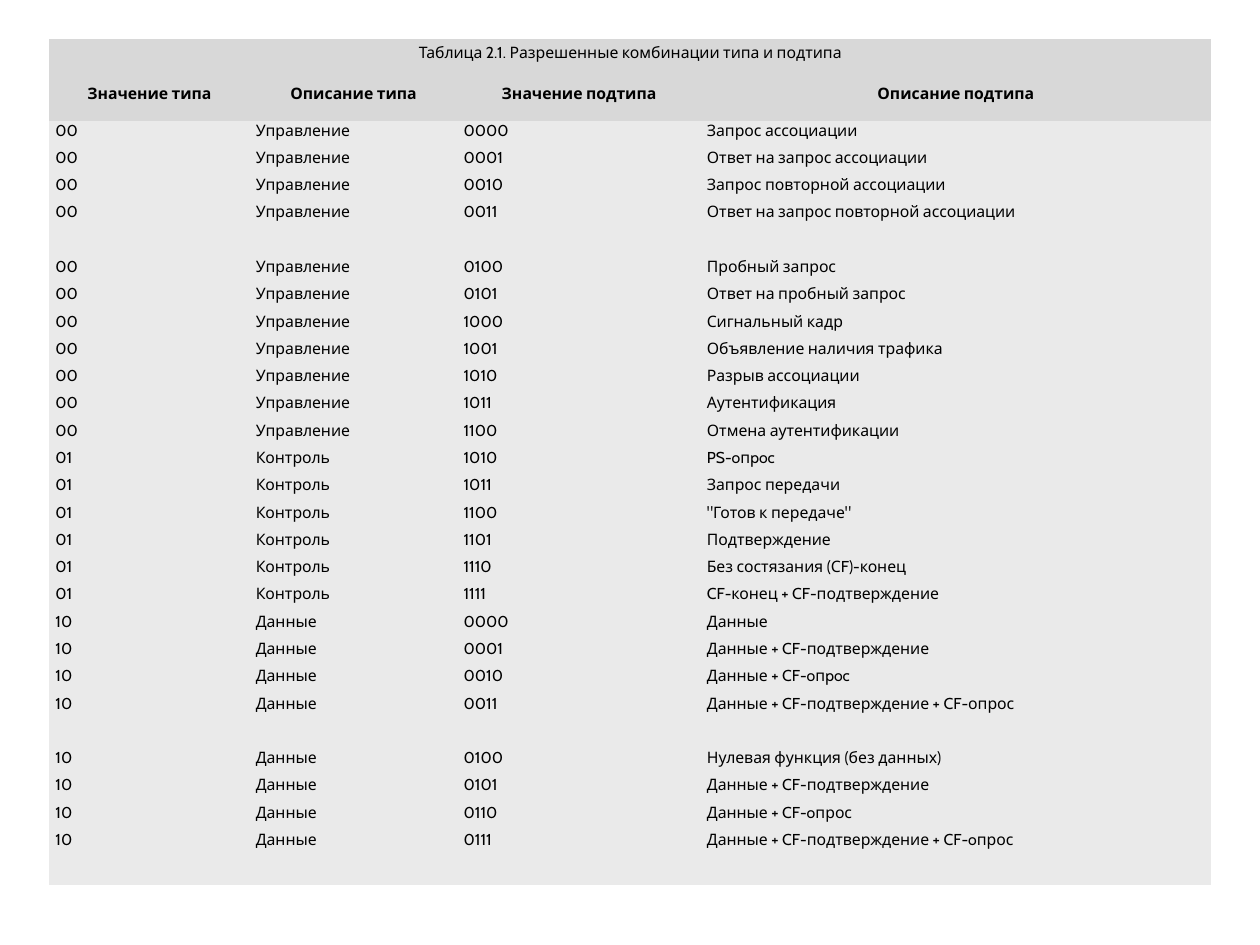
from pptx import Presentation
from pptx.dml.color import RGBColor
from pptx.enum.text import MSO_ANCHOR, PP_ALIGN
from pptx.util import Inches, Pt

LEFT, CENTER = PP_ALIGN.LEFT, PP_ALIGN.CENTER
TOP, MIDDLE = MSO_ANCHOR.TOP, MSO_ANCHOR.MIDDLE
COLORS = {"head": "D8D8D8", "body": "EAEAEA", "text": "000000"}
NO_GRID = "{2D5ABB26-0587-4C30-8999-92F81FD0307C}"

TITLE = "Таблица 2.1. Разрешенные комбинации типа и подтипа"
HEADS = ["Значение типа", "Описание типа", "Значение подтипа", "Описание подтипа"]
GROUPS = [
    ("00", "Управление", [
        ("0000", "Запрос ассоциации"),
        ("0001", "Ответ на запрос ассоциации"),
        ("0010", "Запрос повторной ассоциации"),
        ("0011", "Ответ на запрос повторной ассоциации"),
        ("0100", "Пробный запрос"),
        ("0101", "Ответ на пробный запрос"),
        ("1000", "Сигнальный кадр"),
        ("1001", "Объявление наличия трафика"),
        ("1010", "Разрыв ассоциации"),
        ("1011", "Аутентификация"),
        ("1100", "Отмена аутентификации"),
    ]),
    ("01", "Контроль", [
        ("1010", "PS-oпpoc"),
        ("1011", "Запрос передачи"),
        ("1100", '"Готов к передаче"'),
        ("1101", "Подтверждение"),
        ("1110", "Без состязания (СF)-конец"),
        ("1111", "CF-конец + CF-подтверждение"),
    ]),
    ("10", "Данные", [
        ("0000", "Данные"),
        ("0001", "Данные + CF-подтверждение"),
        ("0010", "Данные + CF-oпpoc"),
        ("0011", "Данные + CF-подтверждение + CF-опрос"),
        ("0100", "Нулевая функция (без данных)"),
        ("0101", "Данные + CF-подтверждение"),
        ("0110", "Данные + CF-oпрос"),
        ("0111", "Данные + CF-подтверждение + CF-oпрос"),
    ]),
]
WIDTHS = [1.59, 1.65, 1.93, 4.05]
TALL = {1, 5, 22, 26}  # rows of double height


def write(cell, text, fill="body", bold=False, align=LEFT, anchor=TOP):
    cell.fill.solid()
    cell.fill.fore_color.rgb = RGBColor.from_string(COLORS[fill])
    cell.margin_left = cell.margin_right = Inches(0.05)
    cell.margin_top = cell.margin_bottom = 0
    cell.vertical_anchor = anchor
    para = cell.text_frame.paragraphs[0]
    para.alignment = align
    run = para.add_run()
    run.text = text
    font = run.font
    font.name, font.size, font.bold = "Cabin", Pt(9), bold
    font.color.rgb = RGBColor.from_string(COLORS["text"])


prs = Presentation()
prs.slide_width, prs.slide_height = Inches(10), Inches(7.5)
slide = prs.slides.add_slide(prs.slide_layouts[6])

# Table grid without style or borders
rows = [(code, kind, *sub) for code, kind, subs in GROUPS for sub in subs]
count = len(rows) + 2
high = Inches(6.72)
frame = slide.shapes.add_table(count, len(WIDTHS), Inches(0.39), Inches(0.31),
                               Inches(sum(WIDTHS)), high)
table = frame.table
table.first_row = table.horz_banding = False
table._tbl.tblPr[0].text = NO_GRID
for col, width in zip(table.columns, WIDTHS):
    col.width = Inches(width)
unit = high // (count + len(TALL))
for i, row in enumerate(table.rows):
    row.height = unit * (2 if i in TALL else 1)

# Title and column heads
table.cell(0, 0).merge(table.cell(0, len(WIDTHS) - 1))
write(table.cell(0, 0), TITLE, fill="head", align=CENTER, anchor=MIDDLE)
for c, head in enumerate(HEADS):
    write(table.cell(1, c), head, fill="head", bold=True, align=CENTER, anchor=MIDDLE)

# Type and subtype rows
for r, row in enumerate(rows, 2):
    for c, text in enumerate(row):
        write(table.cell(r, c), text)

prs.save("out.pptx")
